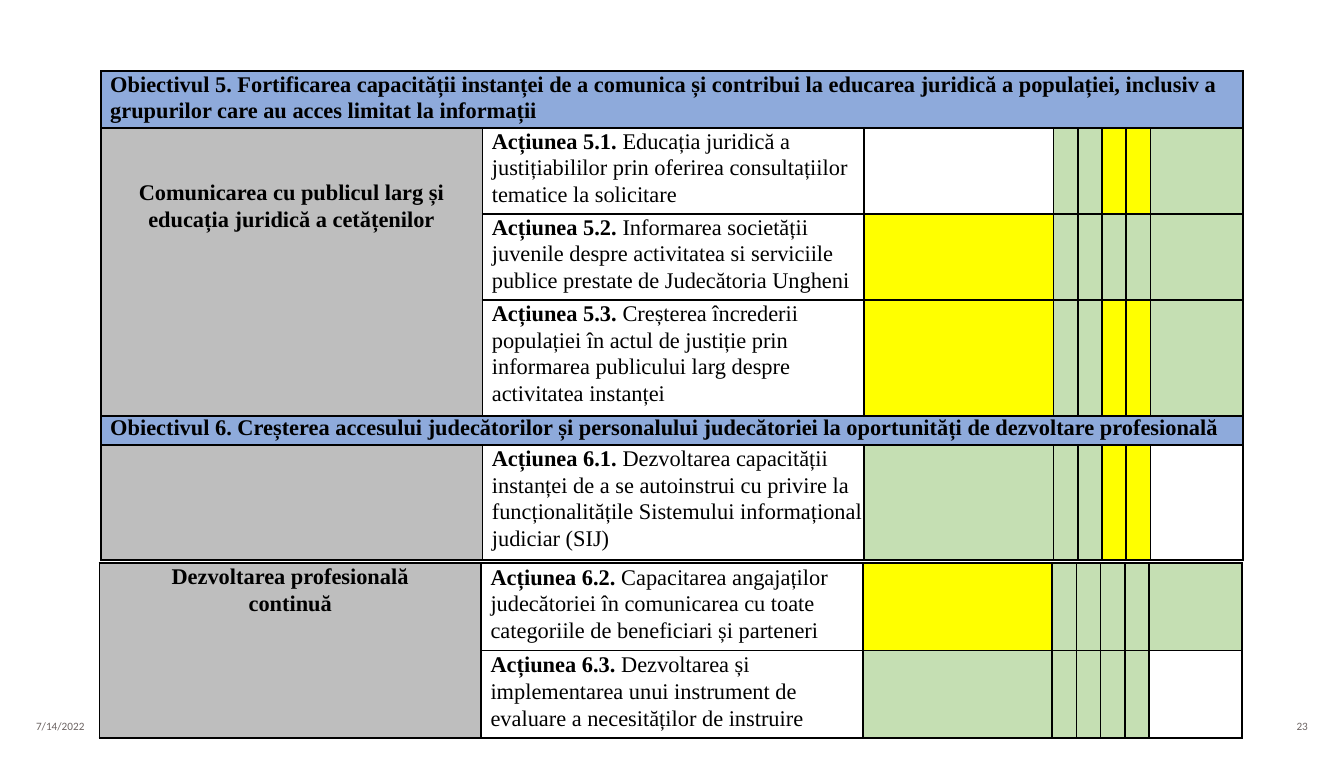
from lxml import etree
from pptx import Presentation
from pptx.dml.color import RGBColor
from pptx.enum.text import MSO_ANCHOR, PP_ALIGN
from pptx.oxml.ns import qn
from pptx.util import Inches, Pt

LEFT, CENTER, RIGHT = PP_ALIGN.LEFT, PP_ALIGN.CENTER, PP_ALIGN.RIGHT
MIDDLE = MSO_ANCHOR.MIDDLE
COLORS = {"black": "000000", "footer": "6C6463", "blue": "8EAADB",
          "gray": "BEBEBE", "G": "C5DFB3", "Y": "FFFF00", "W": "FFFFFF"}
COLUMNS = [2.84, 2.84, 1.41] + [0.18] * 4 + [0.69]
STATUS_START = 2

OBJECTIVE_5 = ("Obiectivul 5. Fortificarea capacității instanței de a comunica și contribui la "
               "educarea juridică a populației, inclusiv a grupurilor care au acces limitat la informații")
OBJECTIVE_6 = ("Obiectivul 6. Creșterea accesului judecătorilor și personalului judecătoriei "
               "la oportunități de dezvoltare profesională")
OBJECTIVE_ROWS = [
    (0.42, OBJECTIVE_5, None, None, 1.06),
    (0.64, "Acțiunea 5.1. ", "Educația juridică a justițiabililor prin oferirea "
     "consultațiilor tematice la solicitare", "WGGYYG", 1.06),
    (0.64, "Acțiunea 5.2. ", "Informarea societății juvenile despre activitatea si serviciile "
     "publice prestate de Judecătoria Ungheni", "YGGGGG", 1.06),
    (0.86, "Acțiunea 5.3. ", "Creșterea încrederii populației în actul de justiție prin "
     "informarea publicului larg despre activitatea instanței", "YGGYYG", 1.07),
    (0.22, OBJECTIVE_6, None, None, 1),
    (0.85, "Acțiunea 6.1. ", "Dezvoltarea capacității instanței de a se autoinstrui cu privire la "
     "funcționalitățile Sistemului informațional judiciar (SIJ)", "GGGYYW", 1.07),
]
DEVELOPMENT_ROWS = [
    (0.65, "Acțiunea 6.2. ", "Capacitarea angajaților judecătoriei în comunicarea cu toate "
     "categoriile de beneficiari și parteneri", "YGGGGG", 1.08),
    (0.65, "Acțiunea 6.3. ", "Dezvoltarea și implementarea unui instrument de evaluare a "
     "necesităților de instruire", "GGGGGW", 1.08),
]


def write(paragraph, text, size=12, font="Times New Roman", color="black", bold=False,
          align=LEFT, spacing=1, indent=0, right_indent=0):
    run = paragraph.add_run()
    run.text = text
    run.font.size = Pt(size)
    run.font.name = font
    run.font.bold = bold
    run.font.color.rgb = RGBColor.from_string(COLORS[color])
    paragraph.alignment = align
    paragraph.line_spacing = spacing
    properties = paragraph._p.get_or_add_pPr()
    properties.set("marL", str(Inches(indent)))
    properties.set("marR", str(Inches(right_indent)))


class PlanSlide:
    def __init__(self, slide):
        self.slide = slide

    def footer(self, text, left, align):
        box = self.slide.shapes.add_textbox(Inches(left), Inches(5.3), Inches(2.33), Inches(0.2))
        frame = box.text_frame
        frame.word_wrap = True
        frame.vertical_anchor = MIDDLE
        paragraph = frame.paragraphs[0]
        paragraph.space_after = Pt(6)
        write(paragraph, text, size=6, font="Calibri", color="footer", align=align)

    def style_cell(self, cell, color):
        cell.margin_left = cell.margin_right = cell.margin_top = cell.margin_bottom = 0
        properties = cell._tc.get_or_add_tcPr()
        for side in ("a:lnL", "a:lnR", "a:lnT", "a:lnB"):
            border = etree.SubElement(properties, qn(side), w=str(Pt(1)))
            line_fill = etree.SubElement(border, qn("a:solidFill"))
            etree.SubElement(line_fill, qn("a:srgbClr"), val=COLORS["black"])
        cell.fill.solid()
        cell.fill.fore_color.rgb = RGBColor.from_string(COLORS[color])

    def plan_table(self, left, top, rows):
        frame = self.slide.shapes.add_table(
            len(rows), len(COLUMNS), Inches(left), Inches(top),
            Inches(sum(COLUMNS)), Inches(sum(row[0] for row in rows)))
        table = frame.table
        table.first_row = table.horz_banding = False
        for column, width in zip(table.columns, COLUMNS):
            column.width = Inches(width)
        for index, (height, heading, description, statuses, spacing) in enumerate(rows):
            table.rows[index].height = Inches(height)
            is_action = description is not None
            fills = ["gray", "W", *statuses] if is_action else ["blue"] * len(COLUMNS)
            for column, color in enumerate(fills):
                self.style_cell(table.cell(index, column), color)
            if not is_action:
                table.cell(index, 0).merge(table.cell(index, len(COLUMNS) - 1))
            paragraph = table.cell(index, int(is_action)).text_frame.paragraphs[0]
            write(paragraph, heading, bold=True, spacing=spacing, indent=0.07)
            if is_action:
                write(paragraph, description, spacing=spacing, indent=0.07)
        return table

    def direction(self, table, first_row, last_row, lines, indent, top=0):
        cell = table.cell(first_row, 0)
        cell.merge(table.cell(last_row, 0))
        cell.margin_top = Inches(top)
        frame = cell.text_frame
        for index, line in enumerate(lines):
            paragraph = frame.add_paragraph() if index else frame.paragraphs[0]
            write(paragraph, line, bold=True, align=CENTER, spacing=1.07,
                  indent=indent, right_indent=indent)


def main():
    presentation = Presentation()
    presentation.slide_width = Inches(10)
    presentation.slide_height = Inches(5.67)
    plan = PlanSlide(presentation.slides.add_slide(presentation.slide_layouts[6]))

    plan.footer("7/14/2022", 0.17, LEFT)
    plan.footer("23", 7.5, RIGHT)

    objectives = plan.plan_table(0.75, 0.53, OBJECTIVE_ROWS)
    plan.direction(objectives, 1, 3, ["Comunicarea cu publicul larg și",
                                      "educația juridică a cetățenilor"], 0.11, top=0.38)
    development = plan.plan_table(0.74, 4.19, DEVELOPMENT_ROWS)
    plan.direction(development, 0, 1, ["Dezvoltarea profesională continuă"], 0.3)

    presentation.save("out.pptx")


if __name__ == "__main__":
    main()
